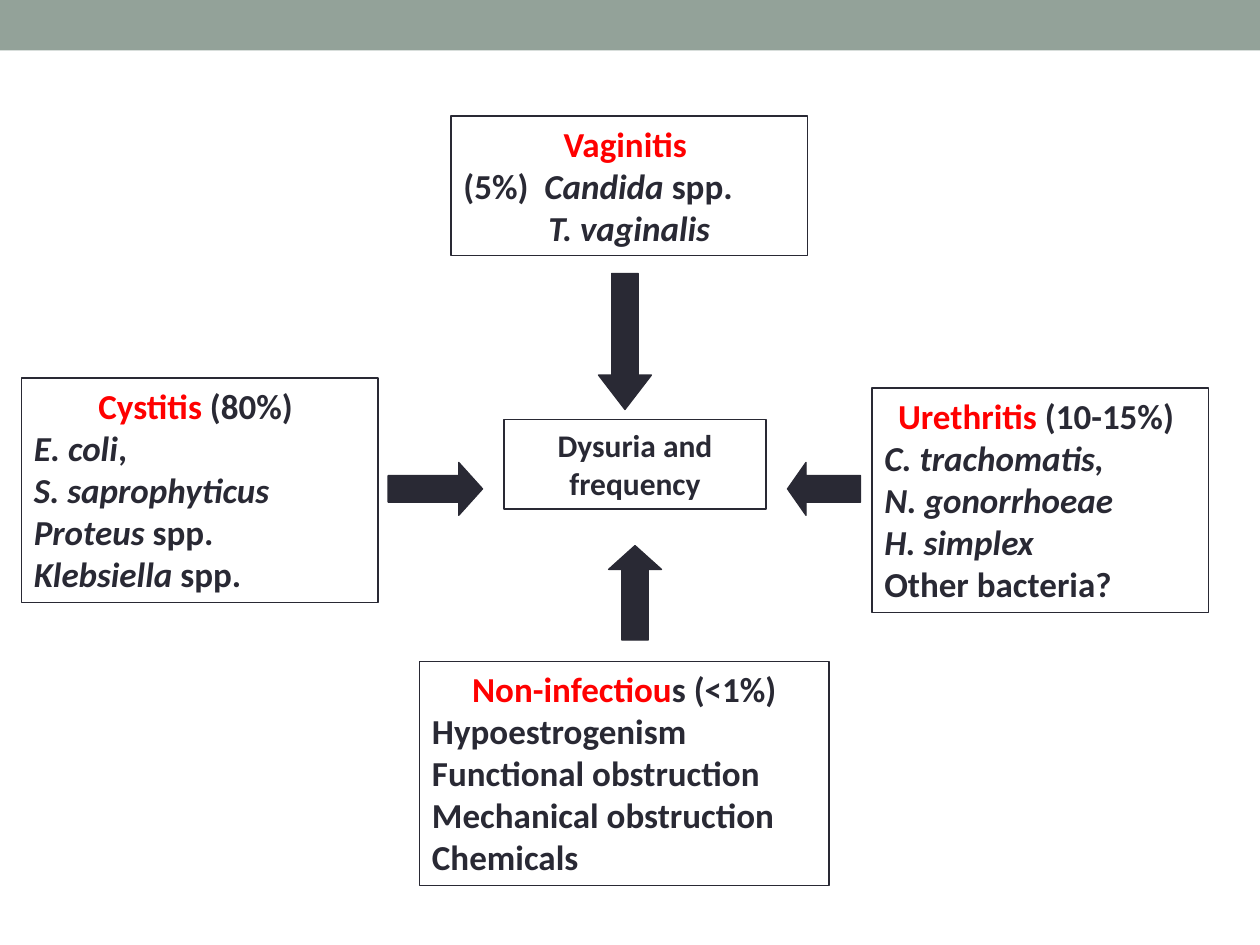
from pptx import Presentation
from pptx.dml.color import RGBColor
from pptx.enum.shapes import MSO_SHAPE
from pptx.enum.text import MSO_ANCHOR, PP_ALIGN
from pptx.util import Inches, Pt

COLORS = {"band": "93A299", "ink": "292934", "accent": "FF0000"}


def color(name):
    return RGBColor.from_string(COLORS[name])


def add_text(paragraph, text, *, size=20, fill="ink", italic=False, font="Calibri"):
    run = paragraph.add_run()
    run.text = text
    run.font.name = font
    run.font.size = Pt(size)
    run.font.bold = True
    run.font.italic = italic
    run.font.color.rgb = color(fill)


def title(*runs):
    return PP_ALIGN.CENTER, runs


def line(*runs):
    return PP_ALIGN.LEFT, runs


def accent(text):
    return text, {"fill": "accent"}


def italic(text):
    return text, {"italic": True}


def plain(text):
    return text, {}


class DiagramBuilder:
    def __init__(self, slide, line_width=0.75):
        self.slide = slide
        self.line_width = Pt(line_width)

    def shape(self, kind, bounds, fill=None, outline="ink"):
        shape = self.slide.shapes.add_shape(kind, *map(Inches, bounds))
        shape.shadow.inherit = False
        if fill:
            shape.fill.solid()
            shape.fill.fore_color.rgb = color(fill)
        else:
            shape.fill.background()
        if outline:
            shape.line.color.rgb = color(outline)
            shape.line.width = self.line_width
        else:
            shape.line.fill.background()
        return shape

    def band(self, bounds):
        self.shape(MSO_SHAPE.RECTANGLE, bounds, fill="band", outline=None)

    def box(self, bounds, paragraphs, size=20):
        """Draw an outlined box from (alignment, runs) paragraphs."""
        frame = self.shape(MSO_SHAPE.RECTANGLE, bounds).text_frame
        frame.word_wrap = True
        frame.vertical_anchor = MSO_ANCHOR.TOP
        for index, (alignment, runs) in enumerate(paragraphs):
            paragraph = frame.add_paragraph() if index else frame.paragraphs[0]
            paragraph.alignment = alignment
            for text, style in runs:
                add_text(paragraph, text, size=size, **style)

    def arrow(self, kind, bounds, head):
        arrow = self.shape(kind, bounds, fill="ink")
        arrow.adjustments[0] = 0.5
        arrow.adjustments[1] = head


def main():
    presentation = Presentation()
    presentation.slide_width = Inches(10)
    presentation.slide_height = Inches(7.5)
    slide = presentation.slides.add_slide(presentation.slide_layouts[6])
    diagram = DiagramBuilder(slide)

    diagram.band((0, 0, 10, 0.4))
    diagram.box((4, 3.33, 2.08, 0.71), [title(plain("Dysuria and frequency"))], size=18)

    causes = [
        ((3.58, 0.92, 2.83, 1.11), [
            title(accent("Vaginitis ")),
            line(plain("(5%)  "), italic("Candida "), plain("spp.")),
            title(italic("T. vaginalis")),
        ]),
        ((0.17, 3, 2.83, 1.78), [
            title(accent("Cystitis "), plain("(80%) ")),
            line(italic("E. coli"), plain(",")),
            line(italic("S. saprophyticus")),
            line(italic("Proteus "), plain("spp.")),
            line(italic("Klebsiella "), plain("spp.")),
        ]),
        ((6.92, 3.08, 2.67, 1.78), [
            title(accent("Urethritis"), plain(" (10-15%) ")),
            line(italic("C. trachomatis,")),
            line(italic("N. gonorrhoeae")),
            line(italic("H. simplex")),
            line(plain("Other bacteria?")),
        ]),
        ((3.33, 5.25, 3.25, 1.78), [
            title(accent("Non-infectiou"), plain("s (<1%)")),
            line(plain("Hypoestrogenism")),
            line(plain("Functional obstruction")),
            line(plain("Mechanical obstruction")),
            line(plain("Chemicals")),
        ]),
    ]
    for bounds, paragraphs in causes:
        diagram.box(bounds, paragraphs)

    arrows = [
        (MSO_SHAPE.DOWN_ARROW, (4.75, 2.17, 0.42, 1.08), 0.65),
        (MSO_SHAPE.RIGHT_ARROW, (3.08, 3.67, 0.75, 0.42), 0.45),
        (MSO_SHAPE.LEFT_ARROW, (6.25, 3.67, 0.58, 0.42), 0.35),
        (MSO_SHAPE.UP_ARROW, (4.83, 4.33, 0.42, 0.75), 0.45),
    ]
    for kind, bounds, head in arrows:
        diagram.arrow(kind, bounds, head)

    presentation.save("out.pptx")


if __name__ == "__main__":
    main()
